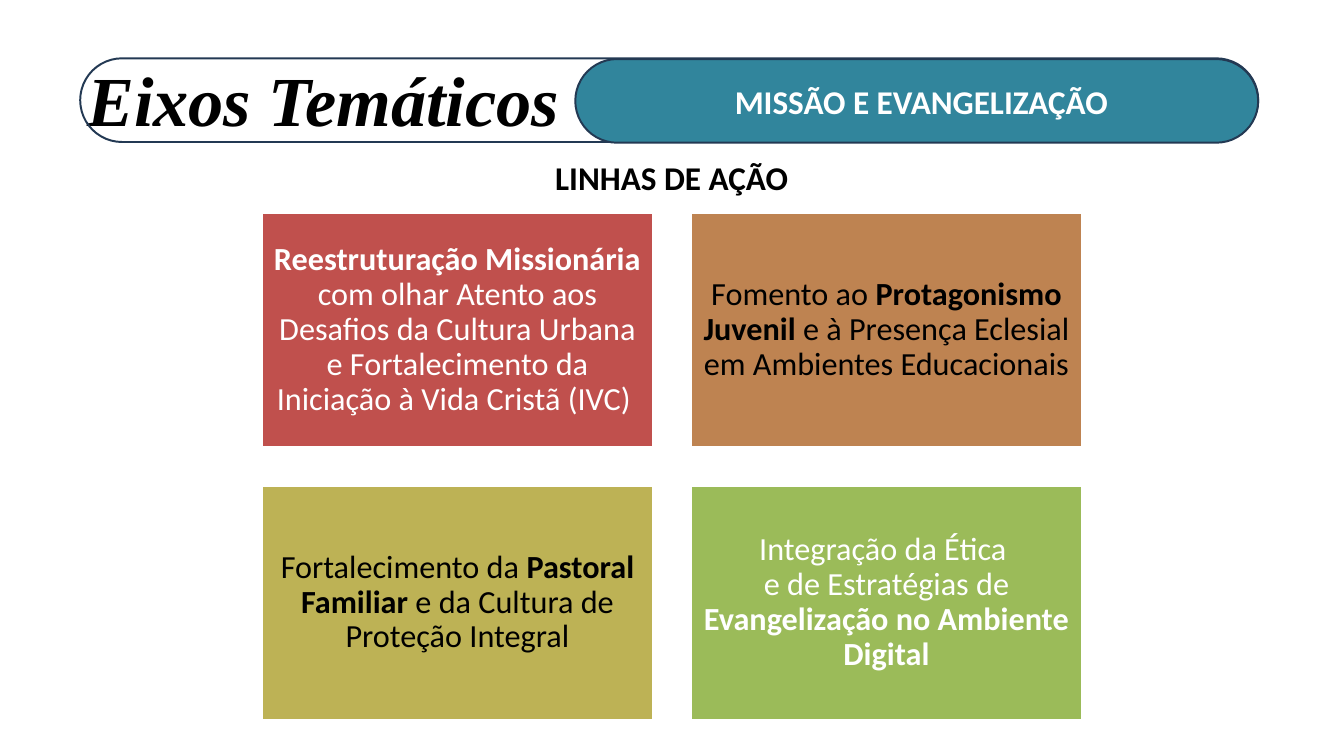
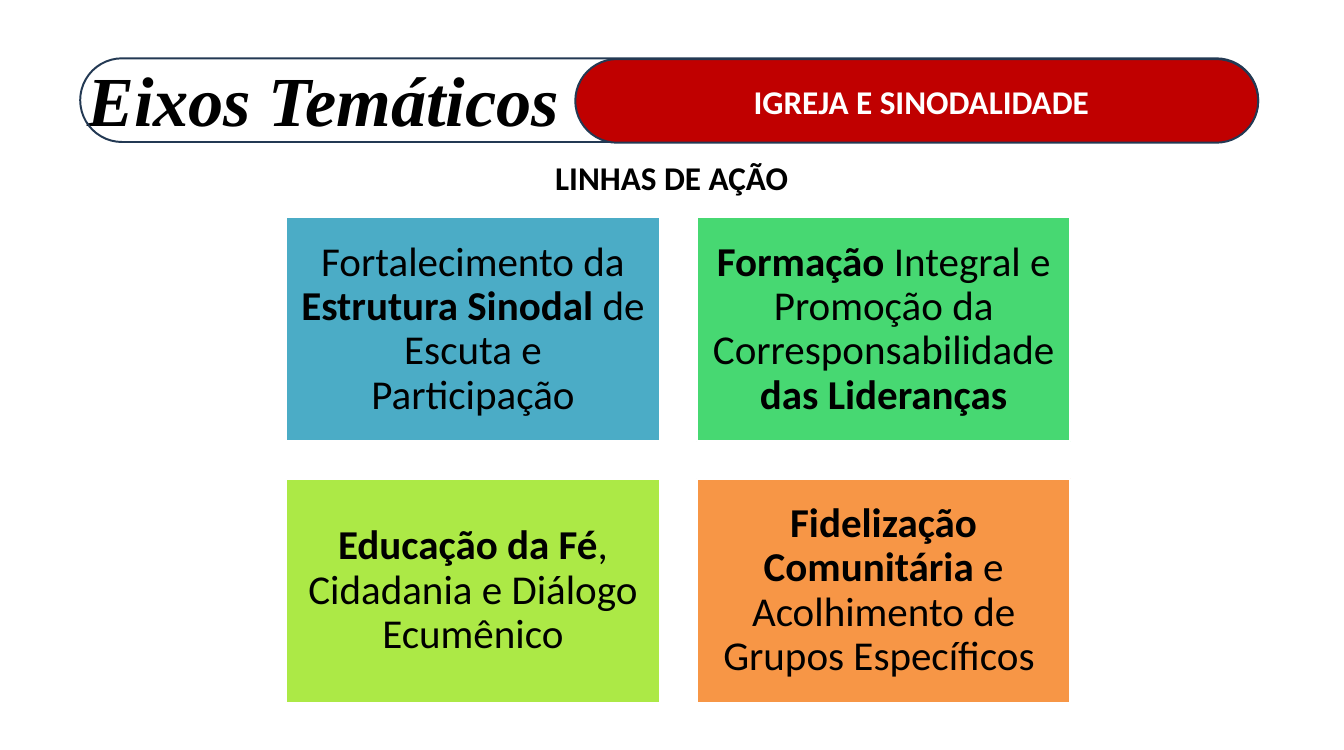
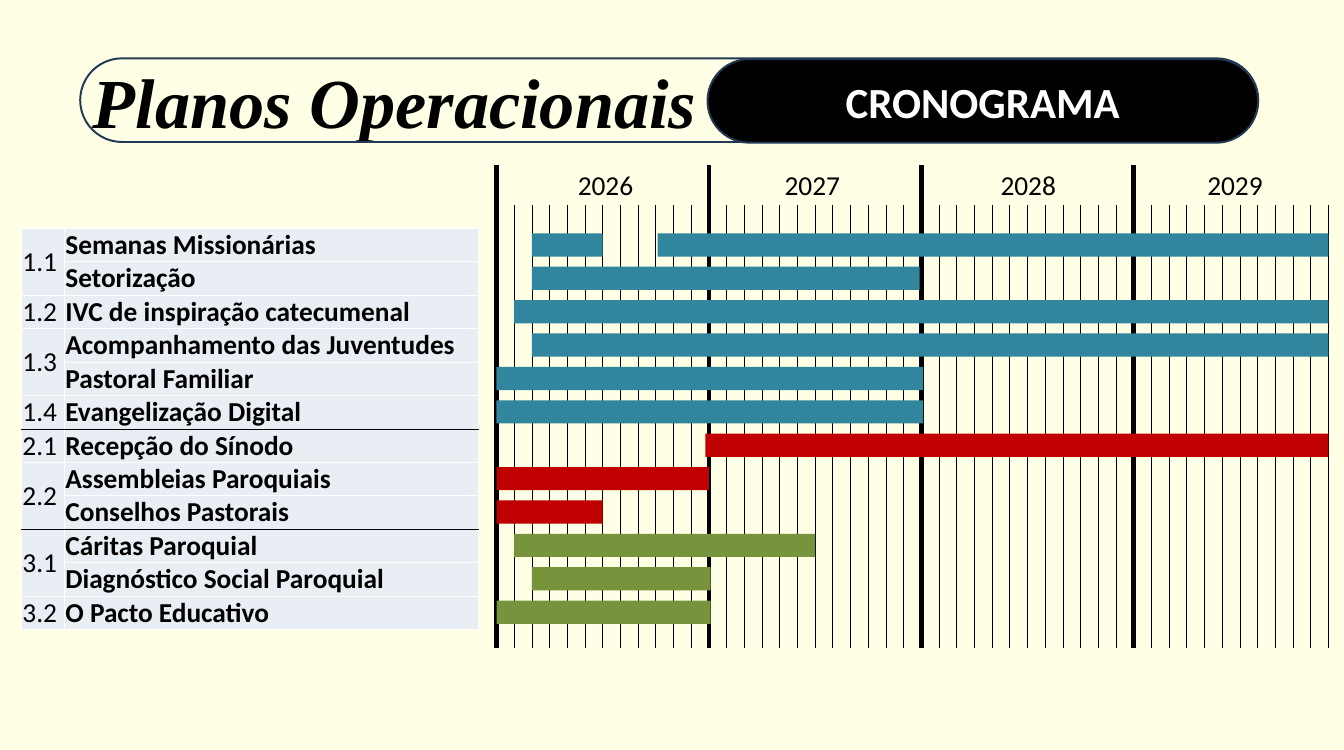
from lxml import etree
from pptx import Presentation
from pptx.dml.color import RGBColor
from pptx.enum.shapes import MSO_CONNECTOR, MSO_SHAPE as SHAPE
from pptx.enum.text import MSO_ANCHOR as ANCHOR, MSO_AUTO_SIZE, PP_ALIGN as ALIGN
from pptx.oxml.ns import qn
from pptx.util import Inches, Pt

BLACK, WHITE, NAVY = "000000", "FFFFFF", "233953"
TEAL, RED, GREEN = "31859C", "C00000", "77933C"
CREAM, CELL = "FFFFE5", "E9EDF4"
BODY, TITLE = "Calibri", "Times New Roman"
BANNER_LEFT, BANNER_RIGHT = 1.14, 17.89

CHART_LEFT, CHART_BOTTOM = 7.06, 9.22
MONTH = 3.02 / 12
MONTHS = 48
ROW = 5.7 / 12

MISSION_CARDS = [
    ("*Reestruturação Missionária *com olhar Atento aos Desafios da Cultura Urbana "
     "e Fortalecimento da Iniciação à Vida Cristã (IVC) ", "C0504D", WHITE),
    ("Fomento ao *Protagonismo Juvenil *e à Presença Eclesial em Ambientes Educacionais",
     "BE8351", BLACK),
    ("Fortalecimento da *Pastoral Familiar* e da Cultura de Proteção Integral",
     "BDB255", BLACK),
    ("Integração da Ética \ne de Estratégias de *Evangelização no Ambiente Digital*",
     "9BBB59", WHITE),
]
CHURCH_CARDS = [
    ("Fortalecimento da *Estrutura Sinodal *de Escuta e Participação", "4BACC6", BLACK),
    ("*Formação* Integral e Promoção da Corresponsabilidade *das Lideranças*",
     "47D872", BLACK),
    ("*Educação da Fé*, Cidadania e Diálogo Ecumênico", "ACE946", BLACK),
    ("*Fidelização Comunitária *e Acolhimento de Grupos Específicos ", "F79646", BLACK),
]
PLANS = [
    ("1.1", "Semanas Missionárias", TEAL, [(2, 6), (9.1, 47)]),
    ("", "Setorização", TEAL, [(2, 23.9)]),
    ("1.2", "IVC de inspiração catecumenal", TEAL, [(1, 47)]),
    ("1.3", "Acompanhamento das Juventudes", TEAL, [(2, 47)]),
    ("", "Pastoral Familiar", TEAL, [(0, 24.1)]),
    ("1.4", "Evangelização Digital", TEAL, [(0, 24.1)]),
    ("2.1", "Recepção do Sínodo", RED, [(11.8, 47)]),
    ("2.2", "Assembleias Paroquiais", RED, [(0, 12)]),
    ("", "Conselhos Pastorais", RED, [(0, 6)]),
    ("3.1", "Cáritas Paroquial", GREEN, [(1, 18)]),
    ("", "Diagnóstico Social Paroquial", GREEN, [(2, 12.1)]),
    ("3.2", "O Pacto Educativo", GREEN, [(0, 12.1)]),
]
YEARS = [("2026", 7.86), ("2027", 10.8), ("2028", 13.87), ("2029", 16.81)]


def rgb(value):
    """Turn a hex string into a colour."""
    return RGBColor.from_string(value)


def style(p, size, color, bold=False, name=BODY, align=ALIGN.CENTER):
    """Format a whole paragraph."""
    p.alignment = align
    p.font.size = Pt(size)
    p.font.name = name
    p.font.bold = bold
    p.font.color.rgb = rgb(color)


def add_marked_text(p, text):
    """Fill a paragraph, with bold between asterisks and line breaks at newlines."""
    for i, chunk in enumerate(text.split("*")):
        for k, part in enumerate(chunk.split("\n")):
            if k:
                p.add_line_break()
            if part:
                r = p.add_run()
                r.text = part
                if i % 2:
                    r.font.bold = True


def add_box(slide, kind, left, top, width, height, fill=None, line=None):
    """Add a flat preset shape."""
    sp = slide.shapes.add_shape(kind, Inches(left), Inches(top), Inches(width), Inches(height))
    sp.shadow.inherit = False
    if fill:
        sp.fill.solid()
        sp.fill.fore_color.rgb = rgb(fill)
    else:
        sp.fill.background()
    if line:
        sp.line.color.rgb = rgb(line)
        sp.line.width = Pt(2)
    else:
        sp.line.fill.background()
    return sp


def add_label(slide, text, left, top, width, height, size, bold=False):
    """Add a centred text box."""
    sp = slide.shapes.add_textbox(Inches(left), Inches(top), Inches(width), Inches(height))
    tf = sp.text_frame
    tf.word_wrap = True
    p = tf.paragraphs[0]
    p.text = text
    style(p, size, BLACK, bold)


def add_pill(slide, left, top, fill=None):
    """Add a rounded band that ends at the right of the banner."""
    sp = add_box(slide, SHAPE.ROUNDED_RECTANGLE, left, top, BANNER_RIGHT - left, 1.19, fill, NAVY)
    sp.adjustments[0] = 0.5
    return sp


def add_banner_slide(prs, title, title_left, title_top, label, pill_left, fill, size, inset=0.1):
    """Add a slide with its title and the coloured pill beside it."""
    slide = prs.slides.add_slide(prs.slide_layouts[5])
    add_pill(slide, BANNER_LEFT, 0.83)
    sp = slide.shapes.title
    sp.left, sp.top = Inches(title_left), Inches(title_top)
    sp.width, sp.height = Inches(17), Inches(1.21)
    tf = sp.text_frame
    tf.auto_size = MSO_AUTO_SIZE.NONE
    tf.vertical_anchor = ANCHOR.TOP
    tf.margin_top = Inches(0.13)
    p = tf.paragraphs[0]
    p.text = title
    p.line_spacing = 1.0
    style(p, 72, BLACK, True, TITLE, ALIGN.LEFT)
    p.font.italic = True
    tf = add_pill(slide, pill_left, 0.84, fill).text_frame
    tf.margin_left = Inches(inset)
    tf.vertical_anchor = ANCHOR.MIDDLE
    tf.paragraphs[0].text = label
    style(tf.paragraphs[0], size, WHITE, True)
    return slide


def add_cards(slide, cards, left, top, width, height, gap, size, inset):
    """Lay out cards in two columns."""
    for i, (text, fill, color) in enumerate(cards):
        row, col = divmod(i, 2)
        sp = add_box(slide, SHAPE.RECTANGLE, left + col * (width + gap),
                     top + row * (height + gap), width, height, fill, WHITE)
        tf = sp.text_frame
        tf.word_wrap = True
        tf.vertical_anchor = ANCHOR.MIDDLE
        tf.margin_left = tf.margin_right = Inches(inset)
        tf.margin_top = tf.margin_bottom = Inches(inset)
        p = tf.paragraphs[0]
        add_marked_text(p, text)
        p.line_spacing = 0.9
        style(p, size, color)


def add_axis_slide(prs, label, fill, cards, **grid):
    """Add a thematic axis with its lines of action."""
    slide = add_banner_slide(prs, "Eixos Temáticos", 1.14, 0.67, label, 8.18, fill, 34, 0.23)
    add_label(slide, "LINHAS DE AÇÃO", 4.76, 2.19, 9.58, 0.67, 34, True)
    add_cards(slide, cards, **grid)


def set_borders(cell, top, bottom):
    """Draw thin cell borders, white at the sides."""
    tc_pr = cell._tc.get_or_add_tcPr()
    for tag, color in (("a:lnL", WHITE), ("a:lnR", WHITE), ("a:lnT", top), ("a:lnB", bottom)):
        ln = etree.SubElement(tc_pr, qn(tag), w=str(Pt(1)))
        fill = etree.SubElement(ln, qn("a:solidFill"))
        etree.SubElement(fill, qn("a:srgbClr"), val=color)


def add_plan_table(slide):
    """Add the table of plans, ruled in black between axes."""
    rows = len(PLANS)
    table = slide.shapes.add_table(rows, 2, Inches(0.31), Inches(3.25),
                                   Inches(6.5), Inches(rows * ROW)).table
    table.first_row = table.horz_banding = False
    table.columns[0].width, table.columns[1].width = Inches(0.61), Inches(5.89)
    for r in range(1, rows):
        if not PLANS[r][0]:
            table.cell(r - 1, 0).merge(table.cell(r, 0))
    starts = {r for r in range(1, rows) if PLANS[r][2] != PLANS[r - 1][2]}
    for r, plan in enumerate(PLANS):
        table.rows[r].height = Inches(ROW)
        for c in range(2):
            cell = table.cell(r, c)
            set_borders(cell, BLACK if r in starts else WHITE,
                        BLACK if r + cell.span_height in starts else WHITE)
            cell.fill.solid()
            cell.fill.fore_color.rgb = rgb(CELL)
            cell.margin_left = cell.margin_right = Inches(0.01)
            cell.margin_top = cell.margin_bottom = 0
            cell.vertical_anchor = ANCHOR.MIDDLE if cell.span_height > 1 else ANCHOR.BOTTOM
            p = cell.text_frame.paragraphs[0]
            p.text = plan[c]
            style(p, 28, BLACK, c == 1, align=ALIGN.LEFT)


def add_vertical(slide, x, top, width):
    """Add a black line down to the foot of the timeline."""
    line = slide.shapes.add_connector(MSO_CONNECTOR.STRAIGHT, Inches(x), Inches(top),
                                      Inches(x), Inches(CHART_BOTTOM))
    line.line.color.rgb = rgb(BLACK)
    line.line.width = Pt(width)
    etree.SubElement(line._element.spPr, qn("a:effectLst"))


def add_timeline(slide):
    """Add month lines, plan bars and year labels."""
    for m in range(MONTHS):
        top, width = (2.92, 0.75) if m % 12 else (2.35, 4.5)
        add_vertical(slide, CHART_LEFT + m * MONTH, top, width)
    for r, (_, _, color, spans) in enumerate(PLANS):
        for start, end in spans:
            add_box(slide, SHAPE.RECTANGLE, CHART_LEFT + start * MONTH, 3.32 + r * ROW,
                    (end - start) * MONTH, 0.33, color)
    for year, left in YEARS:
        add_label(slide, year, left, 2.35, 1.5, 0.57, 28)


def add_schedule_slide(prs):
    """Add the schedule of operational plans."""
    slide = add_banner_slide(prs, "Planos Operacionais", 1.22, 0.7, "CRONOGRAMA",
                             10.06, BLACK, 44)
    slide.background.fill.solid()
    slide.background.fill.fore_color.rgb = rgb(CREAM)
    add_plan_table(slide)
    add_timeline(slide)


def main():
    """Build and save the presentation."""
    prs = Presentation()
    prs.slide_width, prs.slide_height = Inches(19.11), Inches(10.67)
    add_axis_slide(prs, "MISSÃO E EVANGELIZAÇÃO", TEAL, MISSION_CARDS, left=3.73, top=3.03,
                   width=5.55, height=3.33, gap=0.55, size=33, inset=0.14)
    add_axis_slide(prs, "IGREJA E SINODALIDADE", RED, CHURCH_CARDS, left=4.07, top=3.09,
                   width=5.31, height=3.19, gap=0.53, size=42, inset=0.17)
    add_schedule_slide(prs)
    prs.save("out.pptx")


if __name__ == "__main__":
    main()
